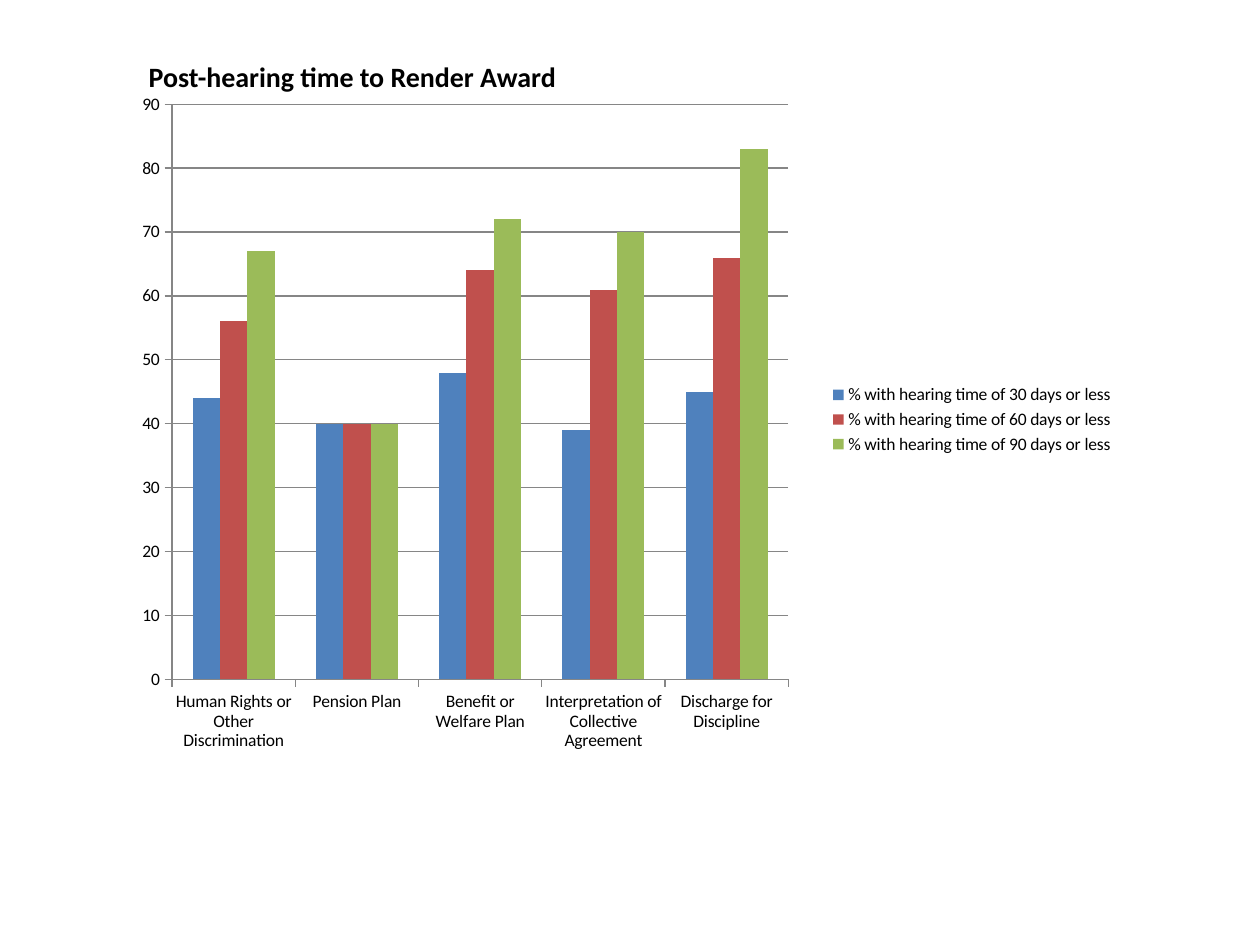
from pptx import Presentation
from pptx.chart.data import CategoryChartData
from pptx.dml.color import RGBColor as RGB
from pptx.enum.chart import XL_CHART_TYPE as CT, XL_LEGEND_POSITION as LP, XL_TICK_MARK as TM
from pptx.enum.text import MSO_ANCHOR, PP_ALIGN
from pptx.oxml import parse_xml
from pptx.oxml.ns import nsdecls
from pptx.util import Pt

TITLE = "Post-hearing time to Render Award"
CATEGORIES = [
    "Human Rights or Other Discrimination",
    "Pension Plan",
    "Benefit or Welfare Plan",
    "Interpretation of Collective Agreement",
    "Discharge for Discipline",
]
SERIES = [
    ("% with hearing time of 30 days or less", "blue", (44, 40, 48, 39, 45)),
    ("% with hearing time of 60 days or less", "red", (56, 40, 64, 61, 66)),
    ("% with hearing time of 90 days or less", "green", (67, 40, 72, 70, 83)),
]
COLORS = {"text": "000000", "line": "868686",
          "blue": "4F81BD", "red": "C0504D", "green": "9BBB59"}
TITLE_BOX = {"left": 77.76, "top": 30.24, "width": 372.24, "height": 26.64}
CHART_BOX = (72, 41.76, 571.68, 396)
PLOT = {"x": 0.046, "y": 0.045, "w": 0.616, "h": 0.83}  # fractions of the chart


def color(name):
    return RGB.from_string(COLORS[name])


def set_font(font, size, bold=False):
    for key, value in {"name": "Calibri", "size": Pt(size), "bold": bold}.items():
        setattr(font, key, value)
    font.color.rgb = color("text")


def set_line(line):
    line.width = Pt(0.75)
    line.color.rgb = color("line")


def place_plot(chart):
    """Fix the inner plot area, which python-pptx leaves to automatic layout."""
    area = chart.element.chart.plotArea
    for old in area.findall("{*}layout"):
        area.remove(old)
    sizes = "".join(f'<c:{k} val="{v}"/>' for k, v in PLOT.items())
    area.insert(0, parse_xml(
        f'<c:layout {nsdecls("c")}><c:manualLayout><c:layoutTarget val="inner"/>'
        f'<c:xMode val="edge"/><c:yMode val="edge"/>{sizes}'
        '</c:manualLayout></c:layout>'))


def add_award_chart(s):
    data = CategoryChartData()
    data.categories = CATEGORIES
    for name, _, values in SERIES:
        data.add_series(name, values)
    frame = s.shapes.add_chart(CT.COLUMN_CLUSTERED, *map(Pt, CHART_BOX), data)
    chart = frame.chart
    chart.has_title = False
    set_font(chart.font, 10)
    chart.has_legend = True
    chart.legend.position = LP.RIGHT
    chart.legend.include_in_layout = False

    plot = chart.plots[0]
    plot.gap_width, plot.overlap, plot.vary_by_categories = 150, 0, False
    for series, (_, fill, _) in zip(plot.series, SERIES):
        series.format.fill.solid()
        series.format.fill.fore_color.rgb = color(fill)

    for axis in (chart.category_axis, chart.value_axis):
        axis.major_tick_mark, axis.minor_tick_mark = TM.OUTSIDE, TM.NONE
        set_line(axis.format.line)
    va = chart.value_axis
    va.minimum_scale, va.maximum_scale, va.major_unit = 0, 90, 10
    va.has_major_gridlines = True
    set_line(va.major_gridlines.format.line)
    place_plot(chart)
    return frame


def add_title(s, below):
    """Fill the title placeholder and stack it above the given shape."""
    title = s.shapes.title
    for key, value in TITLE_BOX.items():
        setattr(title, key, Pt(value))
    tf = title.text_frame
    tf.word_wrap, tf.vertical_anchor = True, MSO_ANCHOR.TOP
    p = tf.paragraphs[0]
    p.alignment = PP_ALIGN.LEFT
    r = p.add_run()
    r.text = TITLE
    set_font(r.font, 16, bold=True)
    below.element.addnext(title.element)


def main():
    prs = Presentation()
    prs.slide_width, prs.slide_height = Pt(720), Pt(540)
    s = prs.slides.add_slide(prs.slide_layouts[5])
    add_title(s, below=add_award_chart(s))
    prs.save("out.pptx")


if __name__ == "__main__":
    main()
